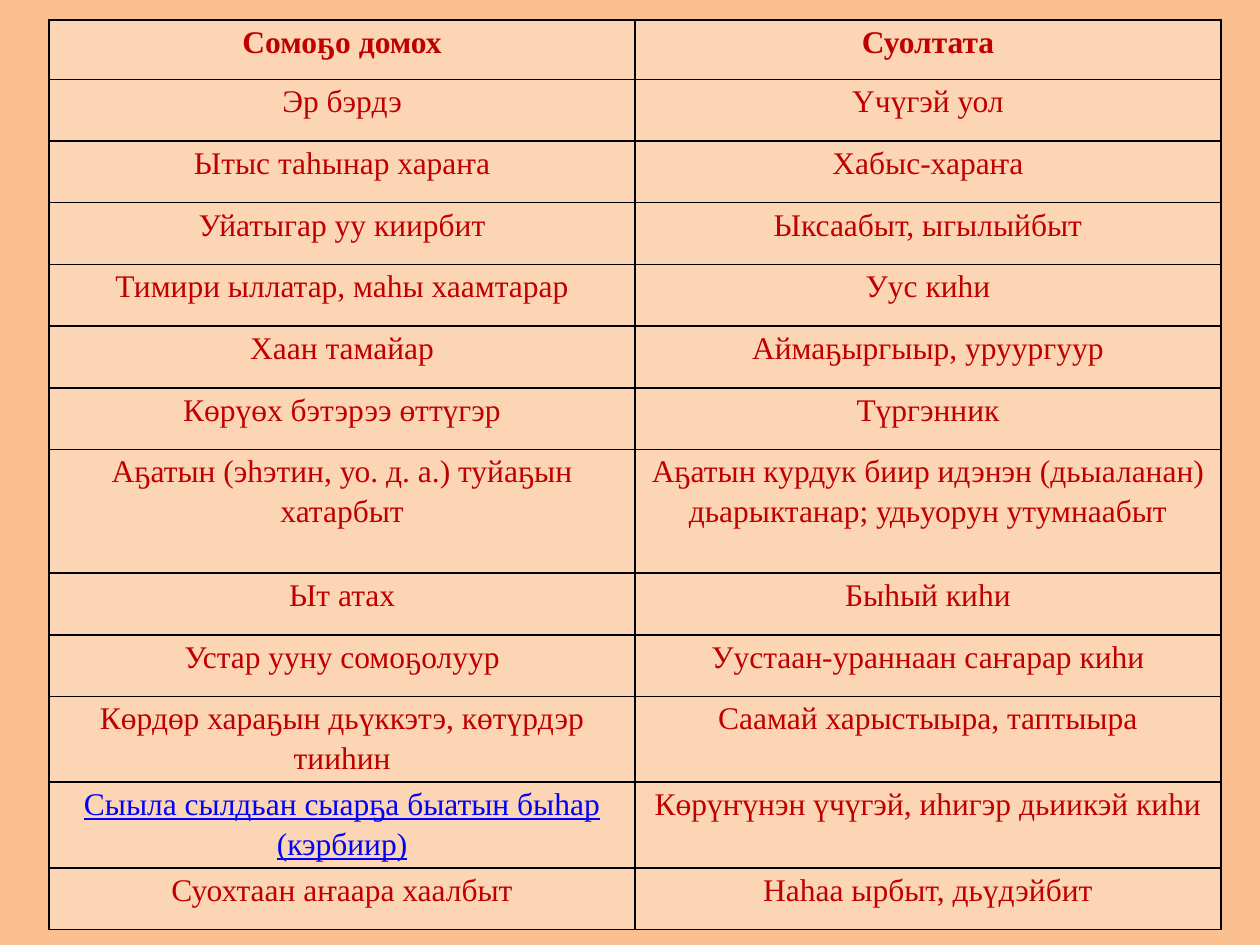
from dataclasses import dataclass

from lxml import etree
from pptx import Presentation, util as u
from pptx.dml.color import RGBColor
from pptx.enum import text
from pptx.oxml.ns import qn


@dataclass(frozen=True)
class Theme:
    background: str = "FAC090"
    cell: str = "FCD5B5"
    ink: str = "C00000"
    link: str = "0000FF"
    border: str = "000000"
    font: str = "Times New Roman"
    size: float = 18
    line_spacing: float = 1.15
    border_width: float = 1


@dataclass(frozen=True)
class Idiom:
    phrase: str
    meaning: str
    height: float = 0.49
    bold: bool = False
    link_style: bool = False


THEME = Theme()
SLIDE_W, SLIDE_H = 10, 7.5
LEFT, TOP, COLUMN_W = 0.39, 0.16, 4.65
MARGIN = 0.07

IDIOMS = [
    Idiom("Сомоҕо домох", "Суолтата", height=0.47, bold=True),
    Idiom("Эр бэрдэ", "Үчүгэй уол"),
    Idiom("Ытыс таһынар хараҥа", "Хабыс-хараҥа"),
    Idiom("Уйатыгар уу киирбит", "Ыксаабыт, ыгылыйбыт"),
    Idiom("Тимири ыллатар, маһы хаамтарар", "Уус киһи"),
    Idiom("Хаан тамайар", "Аймаҕыргыыр, уруургуур"),
    Idiom("Көрүөх бэтэрээ өттүгэр", "Түргэнник"),
    Idiom("Аҕатын (эһэтин, уо. д. а.) туйаҕын хатарбыт",
          "Аҕатын курдук биир идэнэн (дьыаланан) дьарыктанар; удьуорун утумнаабыт",
          height=0.98),
    Idiom("Ыт атах", "Быhый киhи"),
    Idiom("Устар ууну сомоҕолуур", "Уустаан-ураннаан саҥарар киһи"),
    Idiom("Көрдөр хараҕын дьүккэтэ, көтүрдэр тииһин",
          "Саамай харыстыыра, таптыыра", height=0.68),
    Idiom("Сыыла сылдьан сыарҕа быатын быhар (кэрбиир)",
          "Көрүҥүнэн үчүгэй, иhигэр дьиикэй киhи", height=0.68, link_style=True),
    Idiom("Суохтаан аҥаара хаалбыт", "Наһаа ырбыт, дьүдэйбит"),
]


def write(tf, words: str, *, color: str = THEME.ink, bold: bool = False,
          underline: bool = False) -> None:
    p = tf.paragraphs[0]
    p.alignment = text.PP_ALIGN.CENTER
    p.line_spacing = THEME.line_spacing
    r = p.add_run()
    r.text = words
    r.font.name, r.font.size = THEME.font, u.Pt(THEME.size)
    r.font.bold, r.font.underline = bold, underline
    r.font.color.rgb = RGBColor.from_string(color)


def add_borders(cell) -> None:
    """Put a solid line on all four sides, ahead of the fill as the schema asks."""
    props = cell._tc.get_or_add_tcPr()
    for i, side in enumerate(("lnL", "lnR", "lnT", "lnB")):
        line = etree.Element(qn(f"a:{side}"), w=str(u.Pt(THEME.border_width)))
        fill = etree.SubElement(line, qn("a:solidFill"))
        etree.SubElement(fill, qn("a:srgbClr"), val=THEME.border)
        props.insert(i, line)


def format_cell(cell) -> None:
    cell.margin_left = cell.margin_right = u.Inches(MARGIN)
    cell.margin_top = cell.margin_bottom = 0
    cell.fill.solid()
    cell.fill.fore_color.rgb = RGBColor.from_string(THEME.cell)
    add_borders(cell)


def add_idiom_table(s, idioms: list[Idiom]) -> None:
    height = sum(idiom.height for idiom in idioms)
    table = s.shapes.add_table(
        len(idioms), 2, u.Inches(LEFT), u.Inches(TOP),
        u.Inches(2 * COLUMN_W), u.Inches(height)).table
    for column in table.columns:
        column.width = u.Inches(COLUMN_W)
    for row, idiom in zip(table.rows, idioms):
        row.height = u.Inches(idiom.height)
        phrase, meaning = row.cells
        write(phrase.text_frame, idiom.phrase, bold=idiom.bold,
              color=THEME.link if idiom.link_style else THEME.ink,
              underline=idiom.link_style)
        write(meaning.text_frame, idiom.meaning, bold=idiom.bold)
        for cell in (phrase, meaning):
            format_cell(cell)


def main() -> None:
    prs = Presentation()
    prs.slide_width, prs.slide_height = u.Inches(SLIDE_W), u.Inches(SLIDE_H)
    s = prs.slides.add_slide(prs.slide_layouts.get_by_name("Blank"))
    s.background.fill.solid()
    s.background.fill.fore_color.rgb = RGBColor.from_string(THEME.background)
    add_idiom_table(s, IDIOMS)
    prs.save("out.pptx")


if __name__ == "__main__":
    main()
